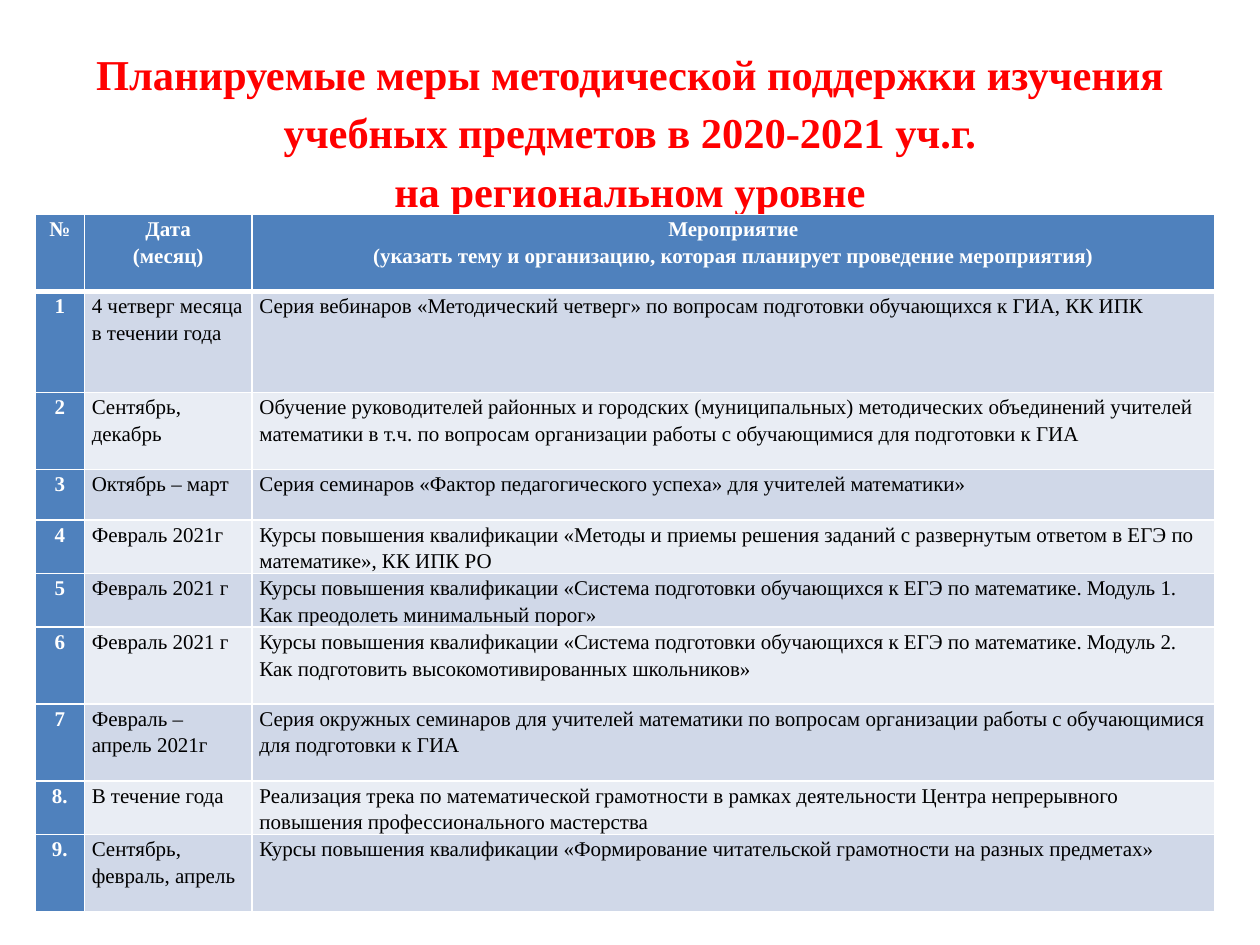
import pptx
import pptx.util
import pptx.dml.color
import pptx.enum.text
import pptx.oxml
import pptx.oxml.ns

Cm, Pt = pptx.util.Cm, pptx.util.Pt
ALIGN = pptx.enum.text.PP_ALIGN
ANCHOR = pptx.enum.text.MSO_ANCHOR

HUES = {"title": "FF0000", "head": "4F81BD", "odd": "D0D8E8",
        "even": "E9EDF4", "white": "FFFFFF", "black": "000000"}
FONT = "Times New Roman"
TITLE = ("Планируемые меры методической поддержки изучения "
         "учебных предметов в 2020-2021 уч.г.\vна региональном уровне")
COLS = [0.99, 3.38, 19.41]
ROWS = [
    (1.55, "№", "Дата\n(месяц)",
     "Мероприятие\n(указать тему и организацию, которая планирует проведение мероприятия)"),
    (2.04, "1", "4 четверг месяца в течении года",
     "Серия вебинаров «Методический четверг» по вопросам подготовки обучающихся к ГИА, КК ИПК"),
    (1.55, "2", "Сентябрь, декабрь",
     "Обучение руководителей районных и городских (муниципальных) методических объединений "
     "учителей математики в т.ч. по вопросам организации работы с обучающимися для подготовки к ГИА"),
    (1.02, "3", "Октябрь – март",
     "Серия семинаров «Фактор педагогического успеха» для учителей математики»"),
    (1.07, "4", "Февраль 2021г",
     "Курсы повышения квалификации «Методы и приемы решения заданий с развернутым ответом "
     "в ЕГЭ по математике», КК ИПК РО"),
    (1.07, "5", "Февраль 2021 г",
     "Курсы повышения квалификации «Система подготовки обучающихся к ЕГЭ по математике. "
     "Модуль 1. Как преодолеть минимальный порог»"),
    (1.55, "6", "Февраль 2021 г",
     "Курсы повышения квалификации «Система подготовки обучающихся к ЕГЭ по математике. "
     "Модуль 2. Как подготовить высокомотивированных школьников»"),
    (1.55, "7", "Февраль – апрель 2021г",
     "Серия окружных семинаров для учителей математики по вопросам организации работы "
     "с обучающимися для подготовки к ГИА"),
    (1.07, "8.", "В течение года",
     "Реализация трека по математической грамотности в рамках деятельности Центра "
     "непрерывного повышения профессионального мастерства"),
    (1.55, "9.", "Сентябрь, февраль, апрель",
     "Курсы повышения квалификации «Формирование читательской грамотности на разных предметах»"),
]


def apply(item, values):
    for name, value in values.items():
        setattr(item, name, value)


def style(frame, size, hue, bold, para):
    for line in frame.paragraphs:
        apply(line, {"line_spacing": 1.15, **para})
        for run in line.runs:
            apply(run.font, {"name": FONT, "size": Pt(size), "bold": bold})
            run.font.color.rgb = pptx.dml.color.RGBColor.from_string(HUES[hue])


def edge(cell, base):
    """Draw white borders; base is the width of the bottom one in points."""
    for side, width in (("L", 1), ("R", 1), ("T", 1), ("B", base)):
        cell._tc.get_or_add_tcPr().append(pptx.oxml.parse_xml(
            f'<a:ln{side} {pptx.oxml.ns.nsdecls("a")} w="{Pt(width)}"><a:solidFill>'
            f'<a:srgbClr val="{HUES["white"]}"/></a:solidFill></a:ln{side}>'))


def add_title(slide):
    title = slide.shapes.title
    apply(title, {"left": Cm(1.27), "top": Cm(0.33), "width": Cm(22.86), "height": Cm(3.9)})
    frame = title.text_frame
    apply(frame, {"text": TITLE, "word_wrap": True, "vertical_anchor": ANCHOR.MIDDLE,
                  "auto_size": pptx.enum.text.MSO_AUTO_SIZE.NONE,
                  "margin_top": Cm(0.6), "margin_bottom": Cm(0)})
    style(frame, 24.3, "title", True, {"alignment": ALIGN.CENTER})


def fill_cell(cell, text, row, col):
    head = row == 0 or col == 0
    apply(cell, {"text": text, "vertical_anchor": ANCHOR.TOP,
                 "margin_left": Cm(0.15), "margin_right": Cm(0.15),
                 "margin_top": Cm(0), "margin_bottom": Cm(0)})
    edge(cell, 3 if row == 0 else 1)
    cell.fill.solid()
    shade = "head" if head else "odd" if row % 2 else "even"
    cell.fill.fore_color.rgb = pptx.dml.color.RGBColor.from_string(HUES[shade])
    para = ({"alignment": ALIGN.CENTER} if head
            else {"alignment": ALIGN.LEFT, "space_after": Pt(10)})
    style(cell.text_frame, 12, "white" if head else "black", head, para)


def add_plan(slide):
    high = sum(row[0] for row in ROWS)
    table = slide.shapes.add_table(len(ROWS), len(COLS), Cm(0.71), Cm(4.32),
                                   Cm(sum(COLS)), Cm(high)).table
    for col, width in enumerate(COLS):
        table.columns[col].width = Cm(width)
    for row, (height, *texts) in enumerate(ROWS):
        table.rows[row].height = Cm(height)
        for col, text in enumerate(texts):
            fill_cell(table.cell(row, col), text, row, col)


def main():
    deck = pptx.Presentation()
    apply(deck, {"slide_width": Cm(25.4), "slide_height": Cm(19.05)})
    slide = deck.slides.add_slide(deck.slide_layouts[5])
    add_title(slide)
    add_plan(slide)
    deck.save("out.pptx")


if __name__ == "__main__":
    main()
